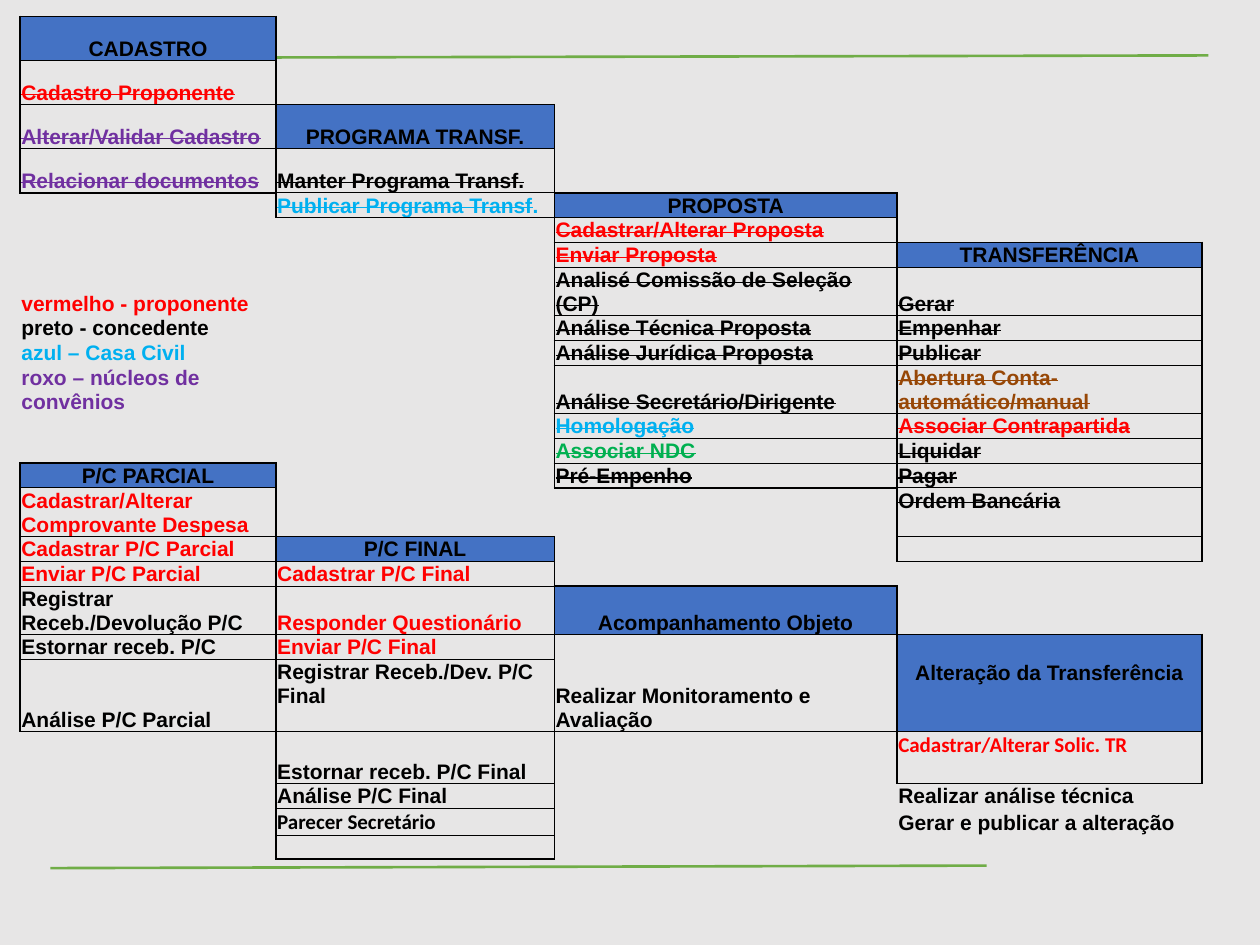
from lxml.etree import SubElement
from pptx import Presentation
from pptx.dml.color import RGBColor as RGB
from pptx.enum.shapes import MSO_CONNECTOR as Conn
from pptx.enum.text import MSO_ANCHOR as Anchor, PP_ALIGN as Align
from pptx.oxml.ns import qn
from pptx.util import Inches, Pt

THEME = {
    "back": "E7E6E6", "head": "4472C4", "rule": "70AD47",
    "black": "000000", "red": "FF0000", "purple": "7030A0",
    "blue": "00B0F0", "green": "00B050", "brown": "974706",
    "font": "Arial", "alt": "Calibri", "size": 12,
    "thick": 1, "thin": 0.5, "line": 1.5,
}

# column, first row, struck through, heading, entries
BLOCKS = [
    (0, 0, True, "CADASTRO", [
        ("Cadastro Proponente", "red"),
        ("Alterar/Validar Cadastro", "purple"),
        ("Relacionar documentos", "purple")]),
    (1, 2, True, "PROGRAMA TRANSF.", [
        ("Manter Programa Transf.", "black"),
        ("Publicar Programa Transf|.", "blue")]),
    (2, 4, True, "PROPOSTA", [
        ("Cadastrar/Alterar Proposta", "red"),
        ("Enviar Proposta", "red"),
        ("Analisé Comissão de Seleção (CP)", "black"),
        ("Análise Técnica Proposta", "black"),
        ("Análise Jurídica Proposta", "black"),
        ("Análise Secretário/Dirigente", "black"),
        ("Homologação", "blue"),
        ("Associar NDC", "green"),
        ("Pré-Empenho", "black")]),
    (3, 6, True, "TRANSFERÊNCIA", [
        ("Gerar", "black"),
        ("Empenhar", "black"),
        ("Publicar", "black"),
        ("Abertura Conta- automático/manual", "brown"),
        ("Associar Contrapartida", "red"),
        ("Liquidar", "black"),
        ("Pagar", "black"),
        ("Ordem Bancária", "black"),
        ("", "black")]),
    (0, 13, False, "P/C PARCIAL", [
        ("Cadastrar/Alterar Comprovante Despesa", "red"),
        ("Cadastrar P/C Parcial", "red"),
        ("Enviar P/C Parcial", "red"),
        ("Registrar Receb./Devolução P/C", "black"),
        ("Estornar receb. P/C", "black"),
        ("Análise P/C Parcial", "black")]),
    (1, 15, False, "P/C FINAL", [
        ("Cadastrar P/C Final", "red"),
        ("Responder Questionário", "red"),
        ("Enviar P/C Final", "red"),
        ("Registrar Receb./Dev. P/C Final", "black"),
        ("Estornar receb. P/C Final", "black"),
        ("Análise P/C Final", "black"),
        ("Parecer Secretário", "black"),
        ("", "black")]),
    (2, 17, False, "Acompanhamento Objeto", [
        ("Realizar Monitoramento e Avaliação", "black")]),
    (3, 18, False, "Alteração da Transferência", [
        ("Cadastrar/Alterar Solic. TR", "red")]),
]
# column, first row, unframed lines
NOTES = [
    (0, 7, [
        ("vermelho - proponente", "red"),
        ("preto - concedente", "black"),
        ("azul – Casa Civil", "blue"),
        ("roxo – núcleos de convênios", "purple")]),
    (3, 21, [
        ("Realizar análise técnica", "black"),
        ("Gerar e publicar a alteração", "black")]),
]
TALL = {"Realizar Monitoramento e Avaliação", "Alteração da Transferência"}
ALT = {"Cadastrar/Alterar Solic. TR", "Parecer Secretário"}
LIFT = {  # space under the text, inches
    "Ordem Bancária": 0.19, "Registrar Receb./Dev. P/C Final": 0.19,
    "Alteração da Transferência": 0.37, "Cadastrar/Alterar Solic. TR": 0.2,
}
RULES = [(0.4, 0.46, 9.59, 0.44), (0.4, 6.89, 7.83, 6.87)]

COLS = [2.03, 2.21, 2.72, 2.42]
LOW, HIGH, TOP = 0.19, 0.38, 0.35
ROWS = [TOP] * 4 + [LOW] * 20
for row in (7, 10, 14, 17):
    ROWS[row] = HIGH
ROWS[19], ROWS[20] = HIGH + LOW, 0.4


def color(name):
    return RGB.from_string(THEME[name])


def draw_rule(slide, x1, y1, x2, y2):
    rule = slide.shapes.add_connector(
        Conn.STRAIGHT, Inches(x1), Inches(y1), Inches(x2), Inches(y2))
    rule.line.color.rgb = color("rule")
    rule.line.width = Pt(THEME["line"])
    SubElement(rule._element.spPr, qn("a:effectLst"))


def frame(cell, top, low):
    """Draw the four cell edges; top and low name the line weights."""
    props = cell._tc.get_or_add_tcPr()
    edges = zip("LRTB", ("thick", "thick", top, low))
    for spot, (side, kind) in enumerate(edges):
        edge = SubElement(props, qn(f"a:ln{side}"), w=str(Pt(THEME[kind])))
        fill = SubElement(edge, qn("a:solidFill"))
        SubElement(fill, qn("a:srgbClr"), val=THEME["black"])
        props.insert(spot, edge)


def write(cell, text, tint, struck=False, align=Align.LEFT):
    """Fill a cell; the part of the text after a bar is never struck."""
    cell.margin_bottom = Inches(LIFT.get(text, 0))
    para = cell.text_frame.paragraphs[0]
    para.alignment = align
    font = para.font
    font.name = THEME["alt" if text in ALT else "font"]
    font.size, font.bold = Pt(THEME["size"]), True
    font.color.rgb = color(tint)
    for spot, part in enumerate(text.split("|") if text else []):
        run = para.add_run()
        run.text = part
        if struck and spot == 0:
            run._r.get_or_add_rPr().set("strike", "sngStrike")


def add_grid(slide):
    shape = slide.shapes.add_table(
        len(ROWS), len(COLS), Inches(0.16), Inches(0.13),
        Inches(sum(COLS)), Inches(sum(ROWS)))
    grid = shape.table
    grid.first_row = grid.horz_banding = False
    style = grid._tbl.tblPr.find(qn("a:tableStyleId"))
    style.text = "{2D5ABB26-0587-4C30-8999-92F81FD0307C}"  # no style, no grid
    for col, wide in zip(grid.columns, COLS):
        col.width = Inches(wide)
    for row, high in zip(grid.rows, ROWS):
        row.height = Inches(high)
    for cell in grid.iter_cells():
        cell.margin_left = cell.margin_right = cell.margin_top = Inches(0.01)
        cell.margin_bottom = 0
        cell.vertical_anchor = Anchor.BOTTOM
        cell.fill.background()
    return grid


def fill_block(grid, col, row, struck, title, items):
    for spot, (text, tint) in enumerate([(title, "black")] + items):
        cell = grid.cell(row, col)
        span = 2 if text in TALL else 1
        if span > 1:
            cell.merge(grid.cell(row + 1, col))
        head = spot == 0
        if head:
            cell.fill.solid()
            cell.fill.fore_color.rgb = color("head")
        write(cell, text, tint, struck and not head,
              Align.CENTER if head else Align.LEFT)
        for part in range(span):
            frame(grid.cell(row + part, col), "thick" if head else "thin",
                  "thick" if spot == len(items) else "thin")
        row += span


def shrink_blanks(grid):
    """Keep empty cells from stretching their rows."""
    for cell in grid.iter_cells():
        if not cell.text:
            para = cell.text_frame.paragraphs[0]._p
            SubElement(para, qn("a:endParaRPr"), sz="1000")


def main():
    deck = Presentation()
    deck.slide_width, deck.slide_height = Inches(10), Inches(7.5)
    slide = deck.slides.add_slide(deck.slide_layouts[6])
    slide.background.fill.solid()
    slide.background.fill.fore_color.rgb = color("back")
    for rule in RULES:
        draw_rule(slide, *rule)
    grid = add_grid(slide)
    for block in BLOCKS:
        fill_block(grid, *block)
    for col, row, items in NOTES:
        for step, (text, tint) in enumerate(items):
            write(grid.cell(row + step, col), text, tint)
    shrink_blanks(grid)
    deck.save("out.pptx")


if __name__ == "__main__":
    main()
